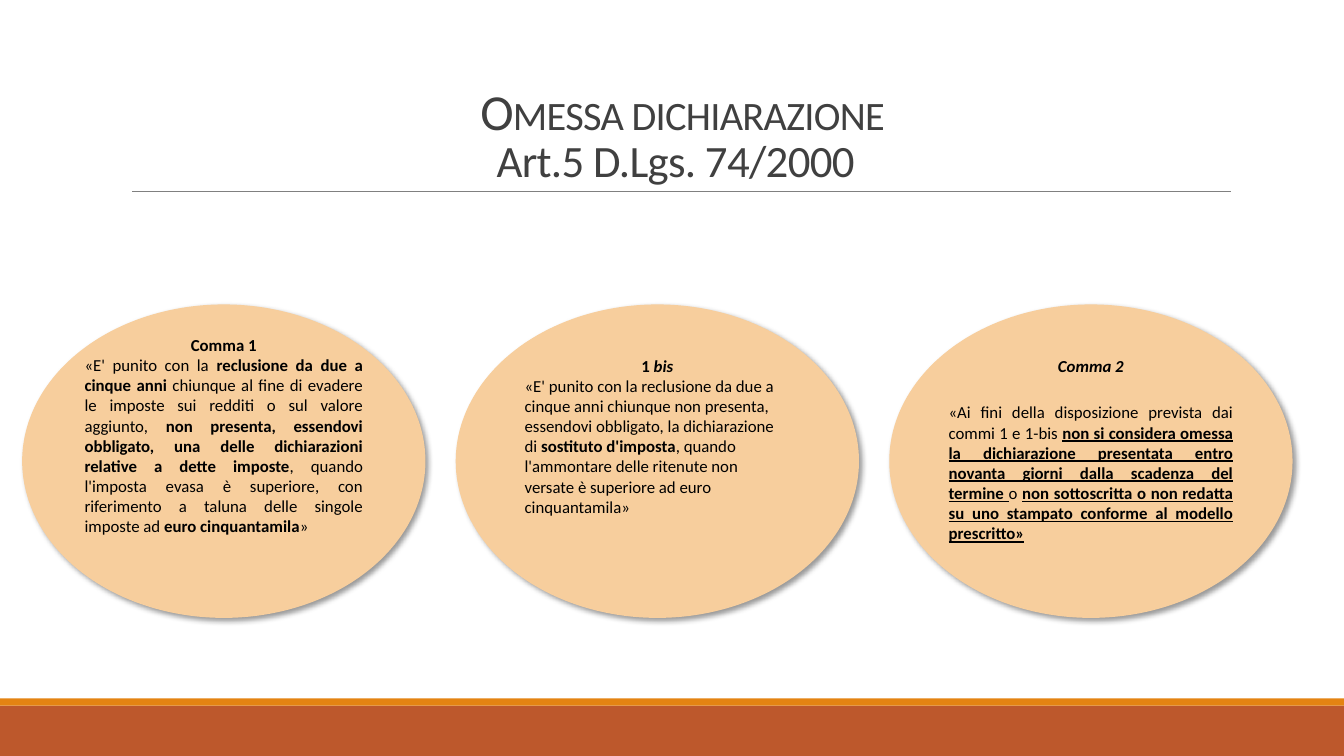
from dataclasses import dataclass

from lxml.etree import SubElement
from pptx import Presentation
from pptx.dml.color import RGBColor
from pptx.enum.shapes import MSO_CONNECTOR, MSO_SHAPE
from pptx.enum.text import MSO_ANCHOR, PP_ALIGN
from pptx.oxml.ns import qn
from pptx.util import Inches, Pt


@dataclass(frozen=True)
class Theme:
    font: str = "Calibri"
    title: RGBColor = RGBColor(0x40, 0x40, 0x40)
    text: RGBColor = RGBColor(0, 0, 0)
    rule: RGBColor = RGBColor(0x80, 0x80, 0x80)
    oval: RGBColor = RGBColor(0xF7, 0xCE, 0x9D)
    band: RGBColor = RGBColor(0xBD, 0x58, 0x2C)
    stripe: RGBColor = RGBColor(0xE4, 0x83, 0x12)
    title_size: int = 36
    subtitle_size: int = 32
    body_size: int = 12


THEME = Theme()

# Each clause: heading runs, body runs, alignment, and the text boxes used.
# A run is (text, style letters): b bold, i italic, u underlined.
# A box is (left, top, width, height) relative to the oval; None is the oval itself.
CLAUSES = [
    {
        "heading": [("Comma 1", "b")],
        "body": [
            ("«E' punito con la ", ""),
            ("reclusione da due a cinque anni", "b"),
            (" chiunque al fine di evadere le imposte sui redditi o sul valore aggiunto, ", ""),
            ("non presenta, essendovi obbligato, una delle dichiarazioni "
             "relative a dette imposte", "b"),
            (", quando l'imposta evasa è superiore, con riferimento a taluna "
             "delle singole imposte ad ", ""),
            ("euro cinquantamila", "b"),
            ("»", ""),
        ],
        "align": PP_ALIGN.JUSTIFY,
        "heading_box": (0.52, 0.25, 2.96, 2.42),
        "body_box": (0.52, 0.25, 2.96, 2.42),
    },
    {
        "heading": [("1 ", "b"), ("bis", "bi")],
        "body": [
            ("«E' punito con la reclusione da due a cinque anni chiunque non presenta, "
             "essendovi obbligato, la dichiarazione di ", ""),
            ("sostituto d'imposta", "b"),
            (", quando l'ammontare delle ritenute non versate è superiore "
             "ad euro cinquantamila»", ""),
        ],
        "align": PP_ALIGN.LEFT,
        "heading_box": None,
        "body_box": None,
    },
    {
        "heading": [("Comma 2", "bi")],
        "body": [
            ("«Ai fini della disposizione prevista dai commi 1 e 1-bis ", ""),
            ("non si considera omessa la dichiarazione presentata entro novanta giorni "
             "dalla scadenza del termine ", "bu"),
            ("o ", ""),
            ("non sottoscritta o non redatta su uno stampato conforme "
             "al modello prescritto»", "bu"),
        ],
        "align": PP_ALIGN.JUSTIFY,
        "heading_box": None,
        "body_box": (0.49, 0.92, 3.02, 1.51),
    },
]


def add_filled(s, kind, box, color):
    sp = s.shapes.add_shape(kind, *map(Inches, box))
    sp.shadow.inherit = False
    sp.fill.solid()
    sp.fill.fore_color.rgb = color
    sp.line.fill.background()
    return sp


def add_text_frame(s, box):
    tf = s.shapes.add_textbox(*map(Inches, box)).text_frame
    tf.word_wrap = True
    return tf


def drop_shadow(sp):
    effects = sp._element.spPr.find(qn("a:effectLst"))
    shadow = SubElement(effects, qn("a:outerShdw"), blurRad=str(Pt(4)), dist=str(Pt(3)),
                        dir=str(45 * 60000), algn="tl", rotWithShape="0")
    color = SubElement(shadow, qn("a:srgbClr"), val="000000")
    SubElement(color, qn("a:alpha"), val="40000")


def write_paragraph(p, runs, align):
    p.alignment = align
    p.font.name = THEME.font
    p.font.size = Pt(THEME.body_size)
    p.font.color.rgb = THEME.text
    for text, style in runs:
        r = p.add_run()
        r.text = text
        r.font.bold = "b" in style
        r.font.italic = "i" in style
        r.font.underline = "u" in style


def add_title(s, box):
    left, top, width, height = box
    tf = add_text_frame(s, box)
    tf.vertical_anchor = MSO_ANCHOR.BOTTOM
    p = tf.paragraphs[0]
    p.alignment = PP_ALIGN.CENTER
    p.line_spacing = 0.85
    p.font.name = THEME.font
    p.font.color.rgb = THEME.title
    lines = [("Omessa dichiarazione", THEME.title_size, "small"),
             ("Art.5 D.Lgs. 74/2000", THEME.subtitle_size, "none")]
    for i, (text, size, caps) in enumerate(lines):
        if i:
            p.add_line_break()
        r = p.add_run()
        r.text = text
        r.font.size = Pt(size)
        r.font._element.set("cap", caps)
        r.font._element.set("spc", "-50")

    # Rule under the title
    y = top + height
    line = s.shapes.add_connector(MSO_CONNECTOR.STRAIGHT, Inches(left + 0.11), Inches(y),
                                  Inches(left + width + 0.01), Inches(y))
    line.line.color.rgb = THEME.rule
    line.line.width = Pt(0.5)
    SubElement(line._element.spPr, qn("a:effectLst"))


def add_clause(s, box, clause):
    oval = add_filled(s, MSO_SHAPE.OVAL, box, THEME.oval)
    drop_shadow(oval)
    oval.text_frame.vertical_anchor = MSO_ANCHOR.TOP
    frames = {None: oval.text_frame}
    parts = [("heading", PP_ALIGN.CENTER), ("body", clause["align"])]
    for part, align in parts:
        inner = clause[part + "_box"]
        if inner not in frames:
            dx, dy, width, height = inner
            frames[inner] = add_text_frame(s, (box[0] + dx, box[1] + dy, width, height))
        tf = frames[inner]
        p = tf.add_paragraph() if tf.paragraphs[0].runs else tf.paragraphs[0]
        write_paragraph(p, clause[part], align)


def add_footer(s, box):
    left, top, width, height = box
    stripe = 0.07
    add_filled(s, MSO_SHAPE.RECTANGLE, (left, top + stripe, width, height - stripe), THEME.band)
    add_filled(s, MSO_SHAPE.RECTANGLE, (left, top, width, stripe), THEME.stripe)


def main():
    prs = Presentation()
    prs.slide_width, prs.slide_height = Inches(13.33), Inches(7.5)
    s = prs.slides.add_slide(prs.slide_layouts[6])
    add_footer(s, (0, 6.93, 13.33, 0.57))
    add_title(s, (1.2, 0.31, 11, 1.59))
    for i, clause in enumerate(CLAUSES):
        add_clause(s, (0.22 + 4.3 * i, 3.02, 4, 3.11), clause)
    prs.save("out.pptx")


if __name__ == "__main__":
    main()
